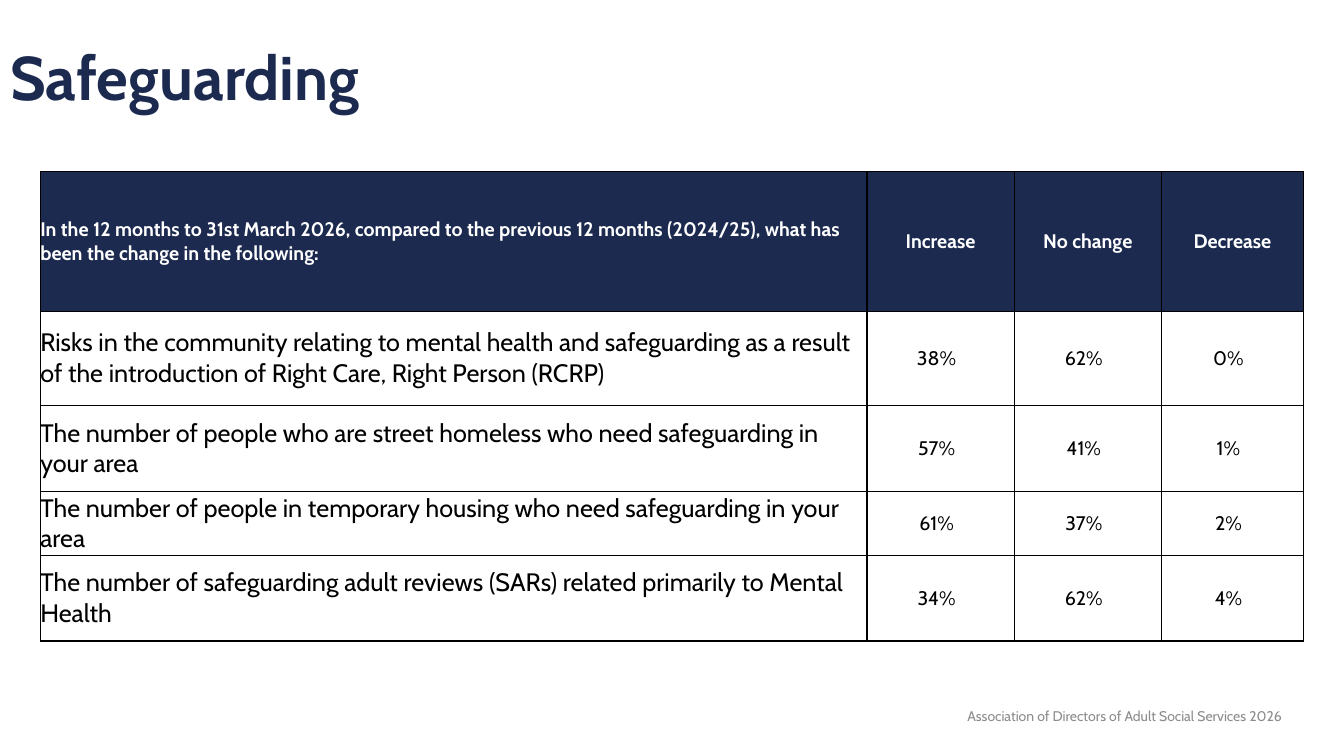
import pptx
import pptx.util
import pptx.dml.color
import pptx.enum.text
import lxml.etree

WIDE, HIGH = 13.33, 7.5
FONT = "Cabin"
NAVY, WHITE, BLACK, GREY = "1D2A50", "FFFFFF", "000000", "8C8C8C"
ALIGN = pptx.enum.text.PP_ALIGN
MIDDLE = pptx.enum.text.MSO_ANCHOR.MIDDLE

COLS = [8.2, 1.46, 1.46, 1.41]
ROWS = [1.39, 0.93, 0.86, 0.63, 0.85]
HEAD = [
    "In the 12 months to 31st March 2026, compared to the previous 12 months "
    "(2024/25), what has been the change in the following:",
    "Increase", "No change", "Decrease",
]
BODY = [
    ["Risks in the community relating to mental health and safeguarding as a result "
     "of the introduction of Right Care, Right Person (RCRP)", "38%", "62%", "0%"],
    ["The number of people who are street homeless who need safeguarding in your area",
     "57%", "41%", "1%"],
    ["The number of people in temporary housing who need safeguarding in your area",
     "61%", "37%", "2%"],
    ["The number of safeguarding adult reviews (SARs) related primarily to Mental Health",
     "34%", "62%", "4%"],
]


def inch(size):
    return pptx.util.Inches(size)


def paint(target, color):
    """Give a colour format its hex colour."""
    target.rgb = pptx.dml.color.RGBColor.from_string(color)


def write(frame, text, size, color, bold=False, align=ALIGN.LEFT):
    frame.text = text
    frame.word_wrap = True
    para = frame.paragraphs[0]
    para.alignment = align
    font = para.runs[0].font
    font.name, font.size, font.bold = FONT, pptx.util.Pt(size), bold
    paint(font.color, color)
    return para


def place(shape, left, top, width, height):
    shape.left, shape.top = inch(left), inch(top)
    shape.width, shape.height = inch(width), inch(height)


def border(cell):
    """Draw a thin black line on all four sides of a cell."""
    props = cell._tc.get_or_add_tcPr()
    space = "http://schemas.openxmlformats.org/drawingml/2006/main"
    for spot, side in enumerate(("lnL", "lnR", "lnT", "lnB")):
        line = lxml.etree.fromstring(
            f'<a:{side} xmlns:a="{space}" w="12700"><a:solidFill>'
            f'<a:srgbClr val="{BLACK}"/></a:solidFill></a:{side}>')
        props.insert(spot, line)


def add_title(slide, text):
    title = slide.shapes.title
    place(title, 0, 0.07, 11.5, 1.45)
    para = write(title.text_frame, text, 44, NAVY, True)
    para.line_spacing = 0.9
    title.text_frame.vertical_anchor = MIDDLE


def add_credit(slide, text):
    box = slide.shapes.add_textbox(inch(8.31), inch(6.9), inch(4.5), inch(0.4))
    write(box.text_frame, text, 10, GREY, align=ALIGN.RIGHT)
    box.text_frame.vertical_anchor = MIDDLE


def fill_cell(cell, text, head, first):
    size = 18 if first and not head else 14
    write(cell.text_frame, text, size, WHITE if head else BLACK, head,
          ALIGN.LEFT if first else ALIGN.CENTER)
    cell.vertical_anchor = MIDDLE
    cell.margin_left = cell.margin_top = cell.margin_bottom = 0
    cell.margin_right = 0 if head else inch(0.08)
    cell.fill.solid()
    paint(cell.fill.fore_color, NAVY if head else WHITE)
    border(cell)


def add_grid(slide, data):
    grid = slide.shapes.add_table(
        len(ROWS), len(COLS), inch(0.4), inch(1.7),
        inch(sum(COLS)), inch(sum(ROWS))).table
    for col, width in zip(grid.columns, COLS):
        col.width = inch(width)
    for row, height in zip(grid.rows, ROWS):
        row.height = inch(height)
    for r, line in enumerate(data):
        for c, text in enumerate(line):
            fill_cell(grid.cell(r, c), text, r == 0, c == 0)


def main():
    deck = pptx.Presentation()
    deck.slide_width, deck.slide_height = inch(WIDE), inch(HIGH)
    slide = deck.slides.add_slide(deck.slide_layouts[5])
    add_title(slide, "Safeguarding")
    add_credit(slide, "Association of Directors of Adult Social Services 2026")
    add_grid(slide, [HEAD] + BODY)
    deck.save("out.pptx")


if __name__ == "__main__":
    main()
